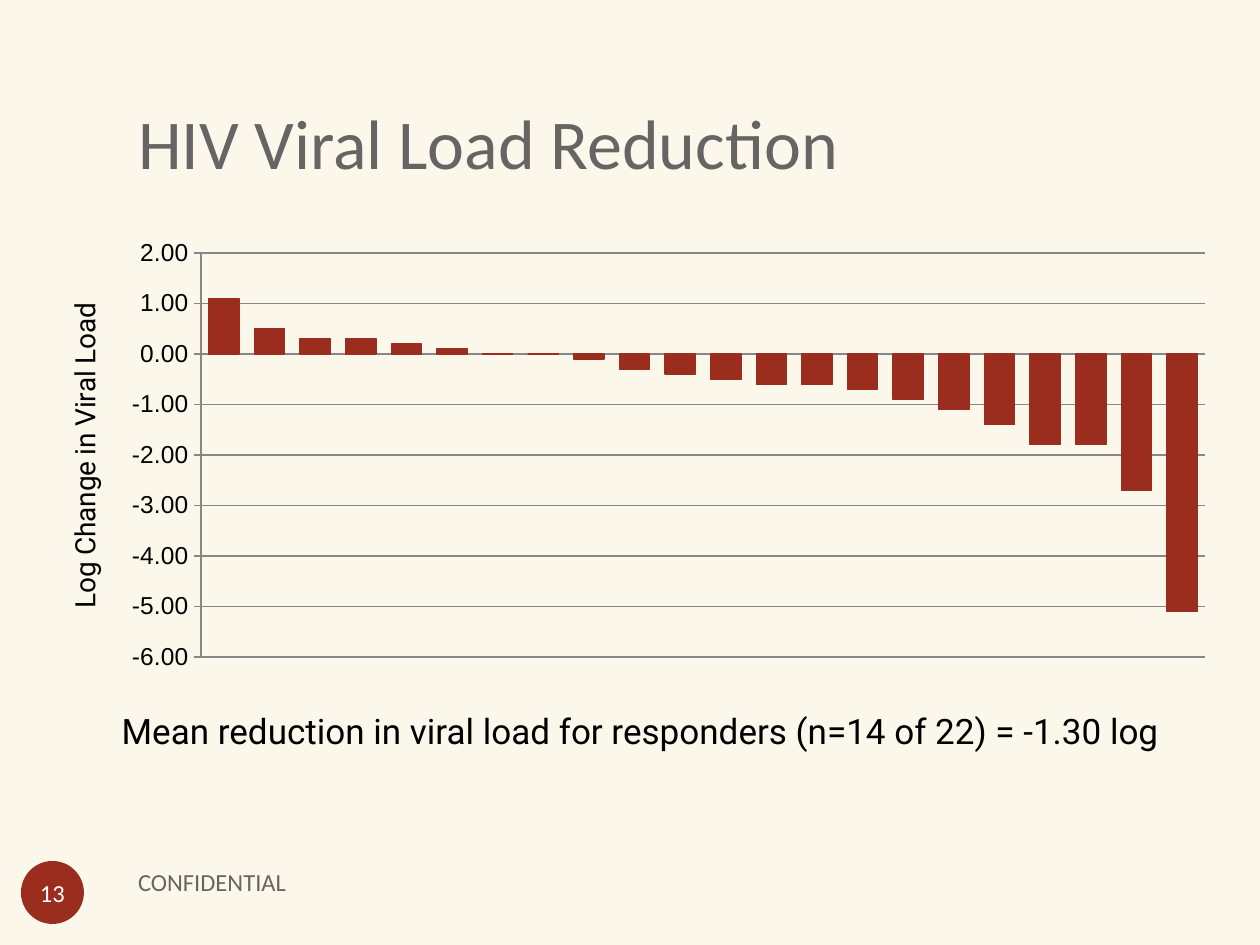
import pptx
import pptx.chart.data
import pptx.dml.color
import pptx.enum.chart
import pptx.enum.shapes
import pptx.enum.text
import pptx.oxml
import pptx.oxml.ns
import pptx.util

# Content
TITLE = "HIV Viral Load Reduction"
NOTE = "Mean reduction in viral load for responders (n=14 of 22) = -1.30 log"
FOOT = "CONFIDENTIAL"
PAGE = "13"
AXIS = "Log Change in Viral Load"
LOADS = [1.1, 0.5, 0.3, 0.3, 0.2, 0.1, 0, 0, -0.1, -0.3, -0.4,
         -0.5, -0.6, -0.6, -0.7, -0.9, -1.1, -1.4, -1.8, -1.8, -2.7, -5.1]

COLORS = {"back": "FBF8EB", "red": "9B2D1F", "gray": "696464",
          "black": "000000", "white": "FFFFFF", "grid": "878787"}
ALIGN = pptx.enum.text.PP_ALIGN
ANCHOR = pptx.enum.text.MSO_ANCHOR
SCALE = 914400 / 126  # EMU in one px
CHART = (42, 231, 1187, 450)
PLOT = (201, 253, 1004, 404)
LABEL = (62, 298)


def emu(px):
    return pptx.util.Emu(round(px * SCALE))


def rgb(name):
    return pptx.dml.color.RGBColor.from_string(COLORS[name])


def style(font, size, face, color):
    font.size = pptx.util.Pt(size)
    font.name = face
    font.bold = False
    font.color.rgb = rgb(color)


def write(shape, text, size=14, face="Calibri", color="gray", align=ALIGN.LEFT,
          anchor=ANCHOR.TOP, inset=(13, 6, 13, 6), wrap=True):
    frame = shape.text_frame
    frame.text = text
    frame.auto_size = pptx.enum.text.MSO_AUTO_SIZE.NONE
    frame.word_wrap = wrap
    frame.vertical_anchor = anchor
    (frame.margin_left, frame.margin_top,
     frame.margin_right, frame.margin_bottom) = map(emu, inset)
    line = frame.paragraphs[0]
    line.alignment = align
    style(line.runs[0].font, size, face, color)


def layout(box, inner=False):
    """Manual chart layout for a px box, as shares of the chart frame."""
    rows = ['<c:layoutTarget val="inner"/>'] if inner else []
    rows += [f'<c:{key}Mode val="edge"/>' for key in "xy"]
    for i, (key, px) in enumerate(zip("xywh", box)):
        base = CHART[i] if i < 2 else 0
        rows.append(f'<c:{key} val="{(px - base) / CHART[2 + i % 2]:.4f}"/>')
    return pptx.oxml.parse_xml(
        f'<c:layout {pptx.oxml.ns.nsdecls("c")}><c:manualLayout>'
        + "".join(rows) + "</c:manualLayout></c:layout>")


def place(parent, index, node):
    for old in parent.findall(pptx.oxml.ns.qn("c:layout")):
        parent.remove(old)
    parent.insert(index, node)


def draw(slide):
    data = pptx.chart.data.CategoryChartData(number_format="0.00")
    data.categories = [str(n + 1) for n in range(len(LOADS))]
    data.add_series("Series 1", LOADS)
    kind = pptx.enum.chart.XL_CHART_TYPE.COLUMN_CLUSTERED
    chart = slide.shapes.add_chart(kind, *map(emu, CHART), data).chart
    chart.has_legend = False
    chart.has_title = False
    style(chart.font, 10, "Calibri", "black")

    # Bars
    plot = chart.plots[0]
    plot.gap_width = 50
    plot.vary_by_categories = False
    bars = plot.series[0]
    bars.invert_if_negative = False
    bars.format.fill.solid()
    bars.format.fill.fore_color.rgb = rgb("red")
    bars.format.line.color.rgb = rgb("red")
    bars.format.line.width = pptx.util.Pt(0.75)

    # Axes
    chart.category_axis.visible = False
    axis = chart.value_axis
    axis.minimum_scale, axis.maximum_scale, axis.major_unit = -6, 2, 1
    axis.major_tick_mark = pptx.enum.chart.XL_TICK_MARK.CROSS
    axis.tick_labels.number_format = "0.00"
    axis.tick_labels.number_format_is_linked = False
    style(axis.tick_labels.font, 14, "Arial", "black")
    axis.has_major_gridlines = True
    for part in (axis, axis.major_gridlines):
        part.format.line.color.rgb = rgb("grid")
        part.format.line.width = pptx.util.Pt(0.75)
    name = axis.axis_title
    name.text_frame.text = AXIS
    style(name.text_frame.paragraphs[0].runs[0].font, 16, "Roboto", "black")

    # Plot and axis title positions
    area = chart.element.find(".//" + pptx.oxml.ns.qn("c:plotArea"))
    place(area, 0, layout(PLOT, inner=True))
    place(area.find(".//" + pptx.oxml.ns.qn("c:title")), 1, layout(LABEL))


def main():
    deck = pptx.Presentation()
    deck.slide_width, deck.slide_height = emu(1260), emu(945)
    slide = deck.slides.add_slide(deck.slide_layouts[5])
    slide.background.fill.solid()
    slide.background.fill.fore_color.rgb = rgb("back")

    # Title
    title = slide.shapes.title
    title.left, title.top, title.width, title.height = map(
        emu, (126, 39, 1071, 157))
    write(title, TITLE, size=40, anchor=ANCHOR.BOTTOM, inset=(12, 6, 12, 12))

    # Page number
    badge = slide.shapes.add_shape(pptx.enum.shapes.MSO_SHAPE.OVAL,
                                   *map(emu, (21, 861, 63, 63)))
    badge.shadow.inherit = False
    badge.fill.solid()
    badge.fill.fore_color.rgb = rgb("red")
    badge.line.fill.background()
    write(badge, PAGE, color="white", align=ALIGN.CENTER,
          anchor=ANCHOR.MIDDLE, inset=(0, 0, 0, 0), wrap=False)

    draw(slide)

    # Finding and footer
    note = slide.shapes.add_textbox(*map(emu, (63, 703, 1155, 55)))
    write(note, NOTE, size=20, face="Roboto", color="black",
          align=ALIGN.CENTER)
    foot = slide.shapes.add_textbox(*map(emu, (126, 850, 546, 63)))
    write(foot, FOOT, anchor=ANCHOR.MIDDLE, inset=(12, 6, 12, 6))
    deck.save("out.pptx")


if __name__ == "__main__":
    main()
